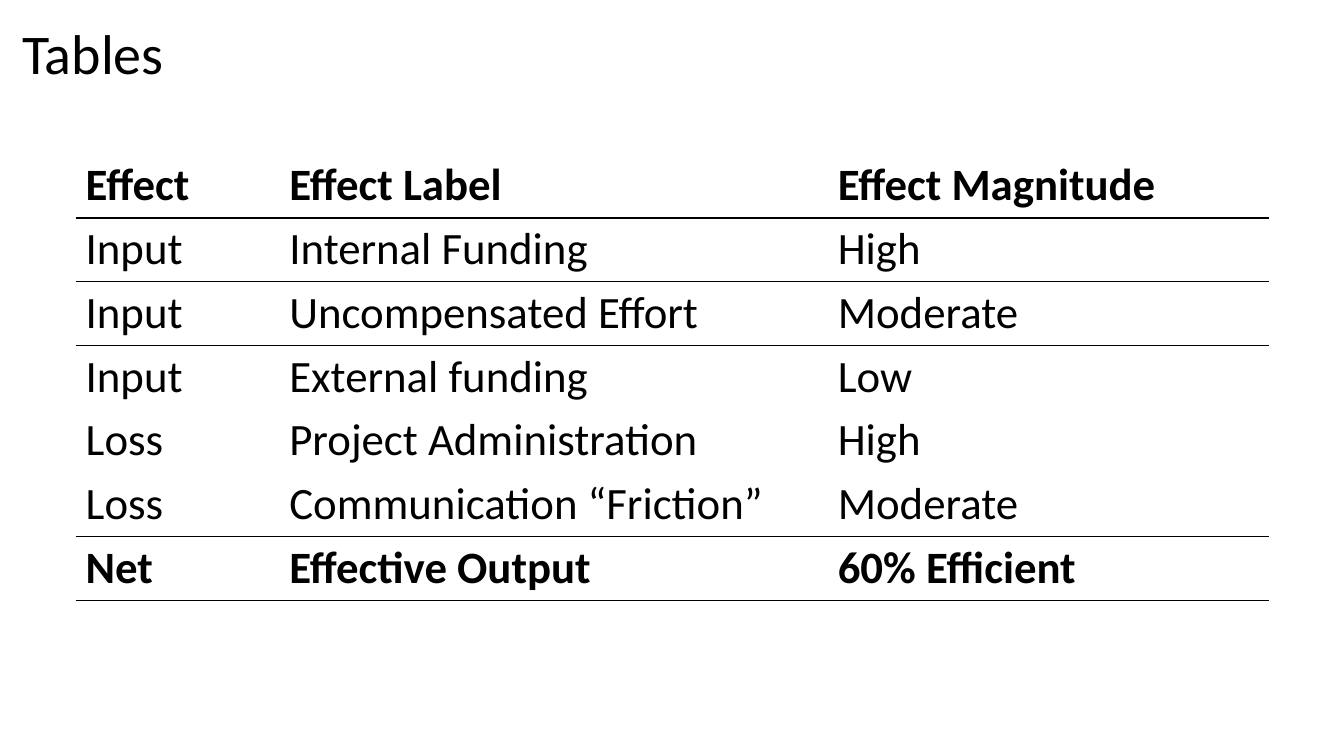
from lxml.etree import SubElement
from pptx import Presentation
from pptx.dml.color import RGBColor
from pptx.oxml.ns import qn
from pptx.util import Inches, Pt

COLORS = {"ink": "000000"}
NO_STYLE = "{2D5ABB26-0587-4C30-8999-92F81FD0307C}"
EFFECTS = [
    ("Effect", "Effect Label", "Effect Magnitude"),
    ("Input", "Internal Funding", "High"),
    ("Input", "Uncompensated Effort", "Moderate"),
    ("Input", "External funding", "Low"),
    ("Loss", "Project Administration", "High"),
    ("Loss", "Communication “Friction”", "Moderate"),
    ("Net", "Effective Output", "60% Efficient"),
]
BOLD_ROWS = {0, 6}
RULED_ROWS = {0, 1, 5, 6}  # rows with a line below


def write(tf, text, size=32, bold=False, color="ink", font="Calibri"):
    r = tf.paragraphs[0].add_run()
    r.text = text
    r.font.name = font
    r.font.size = Pt(size)
    r.font.bold = bold
    r.font.color.rgb = RGBColor.from_string(COLORS[color])


def add_border(cell, side, color="ink", width=1):
    """Draw one cell edge; side is a tag such as a:lnB."""
    ln = SubElement(cell._tc.get_or_add_tcPr(), qn(side), w=str(Pt(width)))
    fill = SubElement(ln, qn("a:solidFill"))
    SubElement(fill, qn("a:srgbClr"), val=COLORS[color])


class SlideBuilder:
    def __init__(self, prs):
        self.s = prs.slides.add_slide(prs.slide_layouts[6])

    def title(self, text, left, top, width, height):
        box = self.s.shapes.add_textbox(
            Inches(left), Inches(top), Inches(width), Inches(height))
        box.text_frame.word_wrap = True
        write(box.text_frame, text, size=40)

    def table(self, rows, left, top, col_widths, height):
        frame = self.s.shapes.add_table(
            len(rows), len(col_widths), Inches(left), Inches(top),
            Inches(sum(col_widths)), Inches(height))
        table = frame.table
        table._tbl.tblPr.find(qn("a:tableStyleId")).text = NO_STYLE
        table.horz_banding = False
        for column, width in zip(table.columns, col_widths):
            column.width = Inches(width)
        for i, values in enumerate(rows):
            for j, text in enumerate(values):
                self.cell(table.cell(i, j), text, i)

    def cell(self, cell, text, row):
        cell.margin_top = cell.margin_bottom = Inches(0.04)
        if row - 1 in RULED_ROWS:
            add_border(cell, "a:lnT")
        if row in RULED_ROWS:
            add_border(cell, "a:lnB")
        cell.fill.background()
        write(cell.text_frame, text, bold=row in BOLD_ROWS)


def main():
    prs = Presentation()
    prs.slide_width, prs.slide_height = Inches(13.33), Inches(7.5)
    slide = SlideBuilder(prs)
    slide.title("Tables", 0.12, 0.13, 3.35, 0.77)
    slide.table(EFFECTS, 0.75, 1.53, [2.02, 5.44, 4.38], 4.43)
    prs.save("out.pptx")


if __name__ == "__main__":
    main()
